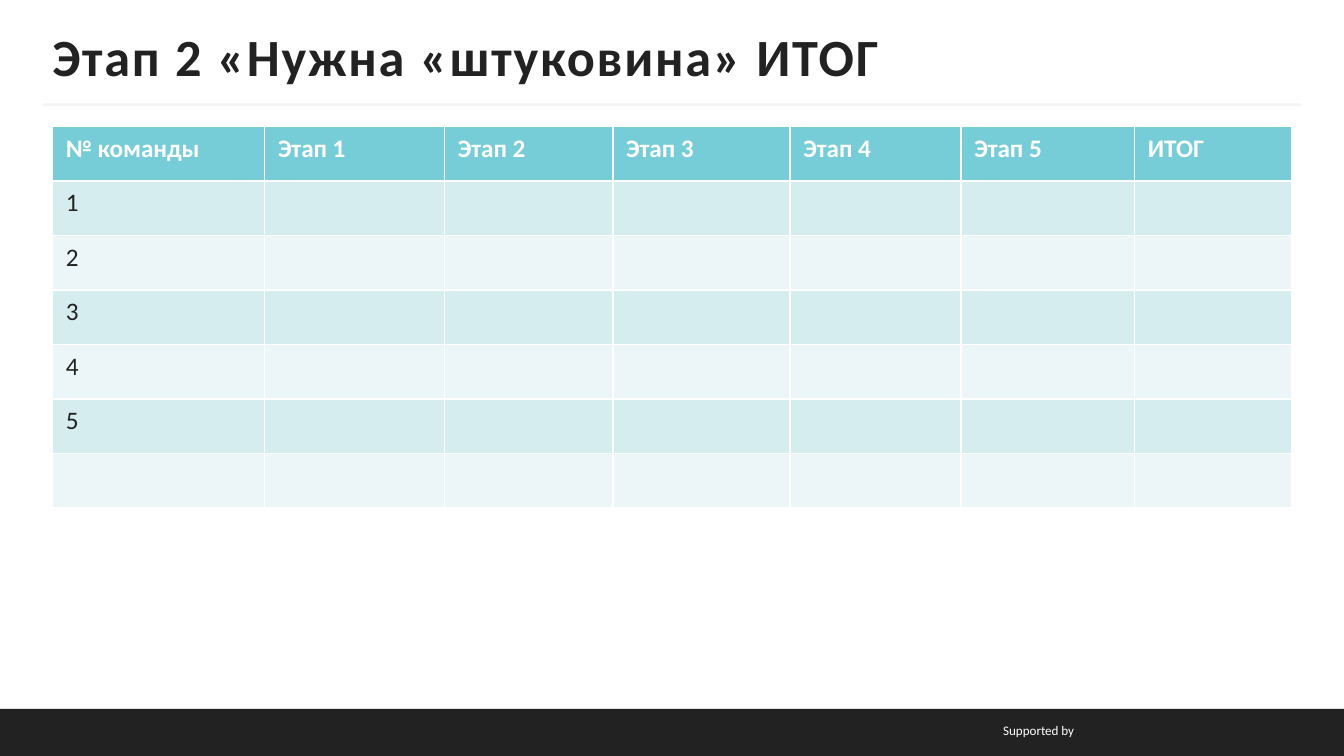
from dataclasses import dataclass

from pptx import Presentation
from pptx.dml.color import RGBColor
from pptx.enum.shapes import MSO_CONNECTOR, MSO_SHAPE
from pptx.enum.text import MSO_ANCHOR, PP_ALIGN
from pptx.oxml.ns import qn
from pptx.util import Cm, Pt
from lxml.etree import SubElement

FONT = "Calibri"
DARK, WHITE, RULE = "222222", "FFFFFF", "F5F5F5"
HEADER_FILL = "76CDD8"
BAND_FILLS = ("ECF6F8", "D6EDF0")
WIDTH, HEIGHT = 25.4, 14.29
MARGIN = 0.99
FOOTER_TOP = 13.4
ROW_HEIGHT = 1.03
TEAMS = 5
HEADERS = ["№ команды", *(f"Этап {stage}" for stage in range(1, 6)), "ИТОГ"]
COLUMN_WIDTHS = (4.01, 3.4, 3.18, 3.35, 3.23, 3.28, 2.97)


@dataclass(frozen=True)
class Style:
    size: float
    color: str
    bold: bool = False
    align: PP_ALIGN = PP_ALIGN.LEFT
    spacing: float = 0


@dataclass(frozen=True)
class Label:
    text: str
    left: float
    top: float
    width: float
    height: float
    style: Style
    anchor: MSO_ANCHOR = MSO_ANCHOR.TOP
    side_inset: float = 0.25


LABELS = (
    Label("Supported by", 13.82, 13.53, 6.73, 0.55,
          Style(7, WHITE, align=PP_ALIGN.RIGHT)),
    Label("Этап 2 «Нужна «штуковина» ИТОГ", MARGIN, 0.64, 23.42, 0.84,
          Style(28, DARK, bold=True, spacing=1), MSO_ANCHOR.MIDDLE, 0),
)


def color(value: str) -> RGBColor:
    return RGBColor.from_string(value)


def write(text_frame, text: str, style: Style) -> None:
    paragraph = text_frame.paragraphs[0]
    paragraph.text = text
    paragraph.alignment = style.align
    font = paragraph.font
    font.name, font.size, font.bold = FONT, Pt(style.size), style.bold
    font.color.rgb = color(style.color)
    if style.spacing:
        properties = paragraph._p.get_or_add_pPr().get_or_add_defRPr()
        properties.set("spc", str(round(style.spacing * 100)))


def draw_label(slide, label: Label) -> None:
    shape = slide.shapes.add_textbox(
        Cm(label.left), Cm(label.top), Cm(label.width), Cm(label.height))
    text_frame = shape.text_frame
    text_frame.word_wrap = True
    text_frame.vertical_anchor = label.anchor
    text_frame.margin_left = text_frame.margin_right = Cm(label.side_inset)
    write(text_frame, label.text, label.style)


def draw_footer_band(slide) -> None:
    shape = slide.shapes.add_shape(
        MSO_SHAPE.RECTANGLE, 0, Cm(FOOTER_TOP), Cm(WIDTH), Cm(HEIGHT - FOOTER_TOP))
    shape.shadow.inherit = False
    shape.fill.solid()
    shape.fill.fore_color.rgb = color(DARK)
    shape.line.fill.background()


def draw_title_rule(slide) -> None:
    connector = slide.shapes.add_connector(
        MSO_CONNECTOR.STRAIGHT, Cm(0.81), Cm(1.98), Cm(WIDTH - 0.81), Cm(1.98))
    connector.line.color.rgb = color(RULE)
    connector.line.width = Pt(1.5)
    SubElement(connector._element.spPr, qn("a:effectLst"))


def draw_score_table(slide) -> None:
    blanks = [""] * (len(HEADERS) - 1)
    teams = [str(team) for team in range(1, TEAMS + 1)]
    rows = [HEADERS, *([team, *blanks] for team in [*teams, ""])]
    table = slide.shapes.add_table(
        len(rows), len(HEADERS), Cm(MARGIN), Cm(2.39),
        Cm(sum(COLUMN_WIDTHS)), Cm(ROW_HEIGHT * len(rows))).table
    for column, width in zip(table.columns, COLUMN_WIDTHS):
        column.width = Cm(width)
    for row_index, texts in enumerate(rows):
        table.rows[row_index].height = Cm(ROW_HEIGHT)
        is_header = row_index == 0
        fill = HEADER_FILL if is_header else BAND_FILLS[row_index % 2]
        style = Style(13.5, WHITE if is_header else DARK, bold=is_header)
        for column_index, text in enumerate(texts):
            cell = table.cell(row_index, column_index)
            cell.fill.solid()
            cell.fill.fore_color.rgb = color(fill)
            write(cell.text_frame, text, style)


def main() -> None:
    presentation = Presentation()
    presentation.slide_width, presentation.slide_height = Cm(WIDTH), Cm(HEIGHT)
    slide = presentation.slides.add_slide(presentation.slide_layouts[6])
    draw_footer_band(slide)
    draw_title_rule(slide)
    for label in LABELS:
        draw_label(slide, label)
    draw_score_table(slide)
    presentation.save("out.pptx")


if __name__ == "__main__":
    main()
